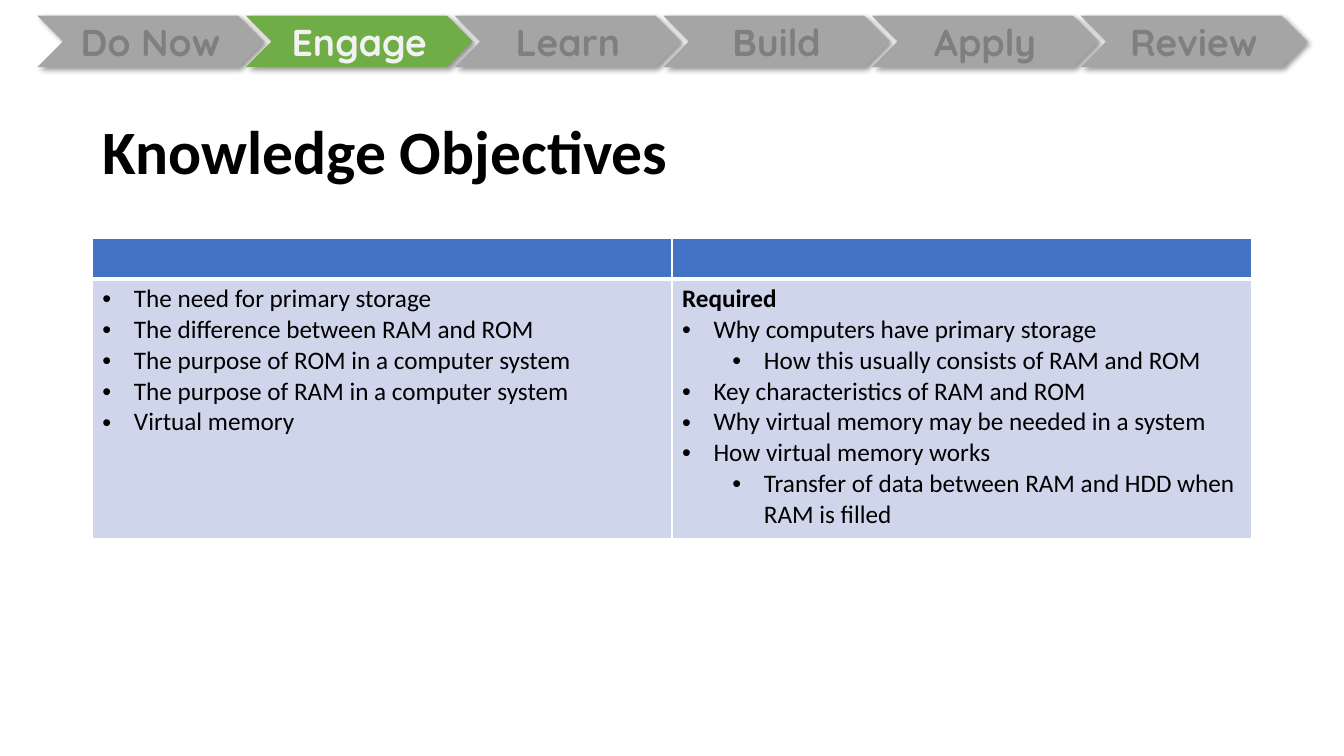
from collections import namedtuple

from lxml import etree
from pptx import Presentation
from pptx.dml.color import RGBColor
from pptx.enum.shapes import MSO_SHAPE
from pptx.enum.text import MSO_ANCHOR, PP_ALIGN
from pptx.oxml.ns import qn
from pptx.util import Pt

CHEVRON = MSO_SHAPE.CHEVRON
MIDDLE = MSO_ANCHOR.MIDDLE
CENTER = PP_ALIGN.CENTER
LEFT = PP_ALIGN.LEFT

WHITE = RGBColor(0xFF, 0xFF, 0xFF)
BLACK = RGBColor(0x00, 0x00, 0x00)
STAGE_GREY = RGBColor(0xA5, 0xA5, 0xA5)
STAGE_TEXT = RGBColor(0x7F, 0x7F, 0x7F)
ACTIVE_GREEN = RGBColor(0x70, 0xAD, 0x47)
ACTIVE_TEXT = RGBColor(0xF2, 0xF2, 0xF2)
HEADER_BLUE = RGBColor(0x44, 0x72, 0xC4)
BODY_BLUE = RGBColor(0xCF, 0xD5, 0xEA)

Box = namedtuple("Box", "left top width height")

STAGES = ["Do Now", "Engage", "Learn", "Build", "Apply", "Review"]
ACTIVE_STAGE = "Engage"
TOPICS = [
    ("The need for primary storage", 0),
    ("The difference between RAM and ROM", 0),
    ("The purpose of ROM in a computer system", 0),
    ("The purpose of RAM in a computer system", 0),
    ("Virtual memory", 0),
]
REQUIRED = [
    ("Required", None),
    ("Why computers have primary storage", 0),
    ("How this usually consists of RAM and ROM", 1),
    ("Key characteristics of RAM and ROM", 0),
    ("Why virtual memory may be needed in a system", 0),
    ("How virtual memory works", 0),
    ("Transfer of data between RAM and HDD when RAM is filled", 1),
]


def format_runs(paragraph, name, size, color, bold):
    for run in paragraph.runs:
        run.font.name = name
        run.font.size = Pt(size)
        run.font.color.rgb = color
        run.font.bold = bold


def add_shadow(shape):
    effects = etree.SubElement(shape._element.spPr, qn("a:effectLst"))
    shadow = etree.SubElement(
        effects, qn("a:outerShdw"), blurRad=str(Pt(4)), dist=str(Pt(3)),
        dir="2700000", algn="tl", rotWithShape="0")
    color = etree.SubElement(shadow, qn("a:srgbClr"), val=str(BLACK))
    etree.SubElement(color, qn("a:alpha"), val="40000")


def add_stages(slide, box):
    chevron_width = 162
    pitch = (box.width - chevron_width) / (len(STAGES) - 1)
    for index, stage in enumerate(STAGES):
        active = stage == ACTIVE_STAGE
        shape = slide.shapes.add_shape(
            CHEVRON, Pt(box.left + index * pitch), Pt(box.top),
            Pt(chevron_width), Pt(box.height))
        shape.fill.solid()
        shape.fill.fore_color.rgb = ACTIVE_GREEN if active else STAGE_GREY
        shape.line.fill.background()
        add_shadow(shape)
        shape.text_frame.text = stage
        shape.text_frame.vertical_anchor = MIDDLE
        paragraph = shape.text_frame.paragraphs[0]
        paragraph.alignment = CENTER
        format_runs(paragraph, "Quicksand", 26.7,
                    ACTIVE_TEXT if active else STAGE_TEXT, True)


def add_title(slide, box):
    title = slide.shapes.title
    title.left, title.top, title.width, title.height = map(Pt, box)
    title.text_frame.text = "Knowledge Objectives"
    title.text_frame.vertical_anchor = MIDDLE
    paragraph = title.text_frame.paragraphs[0]
    paragraph.alignment = LEFT
    paragraph.line_spacing = 0.9
    format_runs(paragraph, "Calibri", 44, BLACK, True)


def format_cell(cell, color, top, bottom):
    cell.fill.solid()
    cell.fill.fore_color.rgb = color
    properties = cell._tc.get_or_add_tcPr()
    widths = {"lnL": 1, "lnR": 1, "lnT": top, "lnB": bottom}
    for index, (side, width) in enumerate(widths.items()):
        border = etree.Element(qn("a:" + side), w=str(Pt(width)))
        fill = etree.SubElement(border, qn("a:solidFill"))
        etree.SubElement(fill, qn("a:srgbClr"), val=str(WHITE))
        properties.insert(index, border)


def add_bullet(paragraph, level):
    paragraph.level = level
    properties = paragraph._p.get_or_add_pPr()
    properties.set("marL", str(Pt(22.5 + 36 * level)))
    properties.set("indent", str(Pt(-22.5)))
    etree.SubElement(properties, qn("a:buFont"), typeface="Arial")
    etree.SubElement(properties, qn("a:buChar"), char="•")


def fill_list(cell, items):
    frame = cell.text_frame
    frame.text = "\n".join(text for text, level in items)
    for paragraph, (text, level) in zip(frame.paragraphs, items):
        if level is not None:
            add_bullet(paragraph, level)
        format_runs(paragraph, "Calibri", 18, BLACK, level is None)


def add_objectives(slide, box):
    header_height = 28.8
    table = slide.shapes.add_table(2, 2, *map(Pt, box)).table
    table.rows[0].height = Pt(header_height)
    table.rows[1].height = Pt(box.height - header_height)
    for column, items in enumerate([TOPICS, REQUIRED]):
        table.columns[column].width = Pt(box.width / 2)
        format_cell(table.cell(0, column), HEADER_BLUE, 1, 3)
        format_cell(table.cell(1, column), BODY_BLUE, 3, 1)
        fill_list(table.cell(1, column), items)


def main():
    presentation = Presentation()
    presentation.slide_width = Pt(960)
    presentation.slide_height = Pt(540)
    slide = presentation.slides.add_slide(presentation.slide_layouts[5])
    add_stages(slide, Box(26.6, 11.2, 907.2, 36.7))
    add_title(slide, Box(66, 58.3, 828, 104.4))
    add_objectives(slide, Box(66, 170, 828, 214.6))
    presentation.save("out.pptx")


if __name__ == "__main__":
    main()
